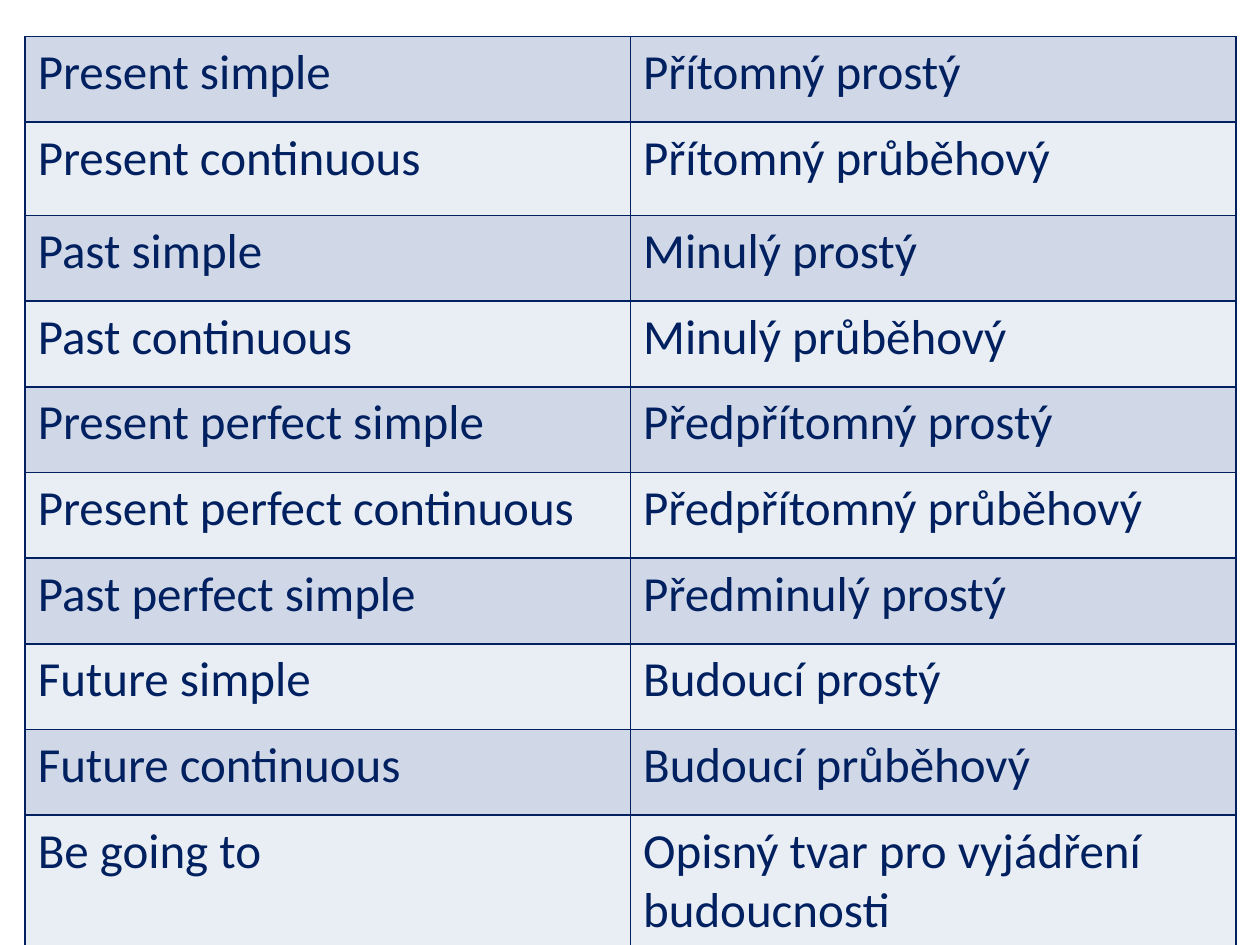
import dataclasses

import lxml.etree
import pptx
import pptx.dml.color
import pptx.oxml.ns
import pptx.util


@dataclasses.dataclass(frozen=True)
class Theme:
    font: str = "Calibri"
    text_size: int = 28
    ink: str = "002060"
    bands: tuple = ("D0D8E8", "E9EDF4")
    border_width: int = 1


THEME = Theme()
PAGE_WIDTH, PAGE_HEIGHT = 10, 7.5
TENSE_BOX = (0.2, 0.29, 9.61, 7.19)
ROW_HEIGHT = 0.68
SPECIAL_HEIGHTS = {1: 0.74, 9: 0.57}

TENSES = [
    ("Present simple", "Přítomný prostý"),
    ("Present continuous", "Přítomný průběhový"),
    ("Past simple", "Minulý prostý"),
    ("Past continuous", "Minulý průběhový"),
    ("Present perfect simple", "Předpřítomný prostý"),
    ("Present perfect continuous", "Předpřítomný průběhový"),
    ("Past perfect simple", "Předminulý prostý"),
    ("Future simple", "Budoucí prostý"),
    ("Future continuous", "Budoucí průběhový"),
    ("Be going to", "Opisný tvar pro vyjádření budoucnosti"),
]


def color(value):
    return pptx.dml.color.RGBColor.from_string(value)


def add_borders(cell):
    """Line all four sides; borders must come before the fill in the XML."""
    properties = cell._tc.get_or_add_tcPr()
    qn = pptx.oxml.ns.qn
    for index, side in enumerate(("lnL", "lnR", "lnT", "lnB")):
        line = lxml.etree.Element(qn(f"a:{side}"))
        line.set("w", str(pptx.util.Pt(THEME.border_width)))
        fill = lxml.etree.SubElement(line, qn("a:solidFill"))
        lxml.etree.SubElement(fill, qn("a:srgbClr")).set("val", THEME.ink)
        properties.insert(index, line)


def style_cell(cell, text, band):
    cell.text = text
    cell.fill.solid()
    cell.fill.fore_color.rgb = color(band)
    font = cell.text_frame.paragraphs[0].font
    font.name = THEME.font
    font.size = pptx.util.Pt(THEME.text_size)
    font.bold = False
    font.color.rgb = color(THEME.ink)
    add_borders(cell)


def add_tense_table(page, box):
    left, top, width, height = map(pptx.util.Inches, box)
    frame = page.shapes.add_table(len(TENSES), 2, left, top, width, height)
    table = frame.table
    table.first_row = False
    table.horz_banding = False

    # Alternating bands, one tense per row
    for index, tense in enumerate(TENSES):
        row_height = SPECIAL_HEIGHTS.get(index, ROW_HEIGHT)
        table.rows[index].height = pptx.util.Inches(row_height)
        band = THEME.bands[index % len(THEME.bands)]
        for column, text in enumerate(tense):
            style_cell(table.cell(index, column), text, band)

    # The last row grows with its wrapped text to fill the box
    frame.height = height


def main():
    deck = pptx.Presentation()
    deck.slide_width = pptx.util.Inches(PAGE_WIDTH)
    deck.slide_height = pptx.util.Inches(PAGE_HEIGHT)
    page = deck.slides.add_slide(deck.slide_layouts[6])
    add_tense_table(page, TENSE_BOX)
    deck.save("out.pptx")


if __name__ == "__main__":
    main()
